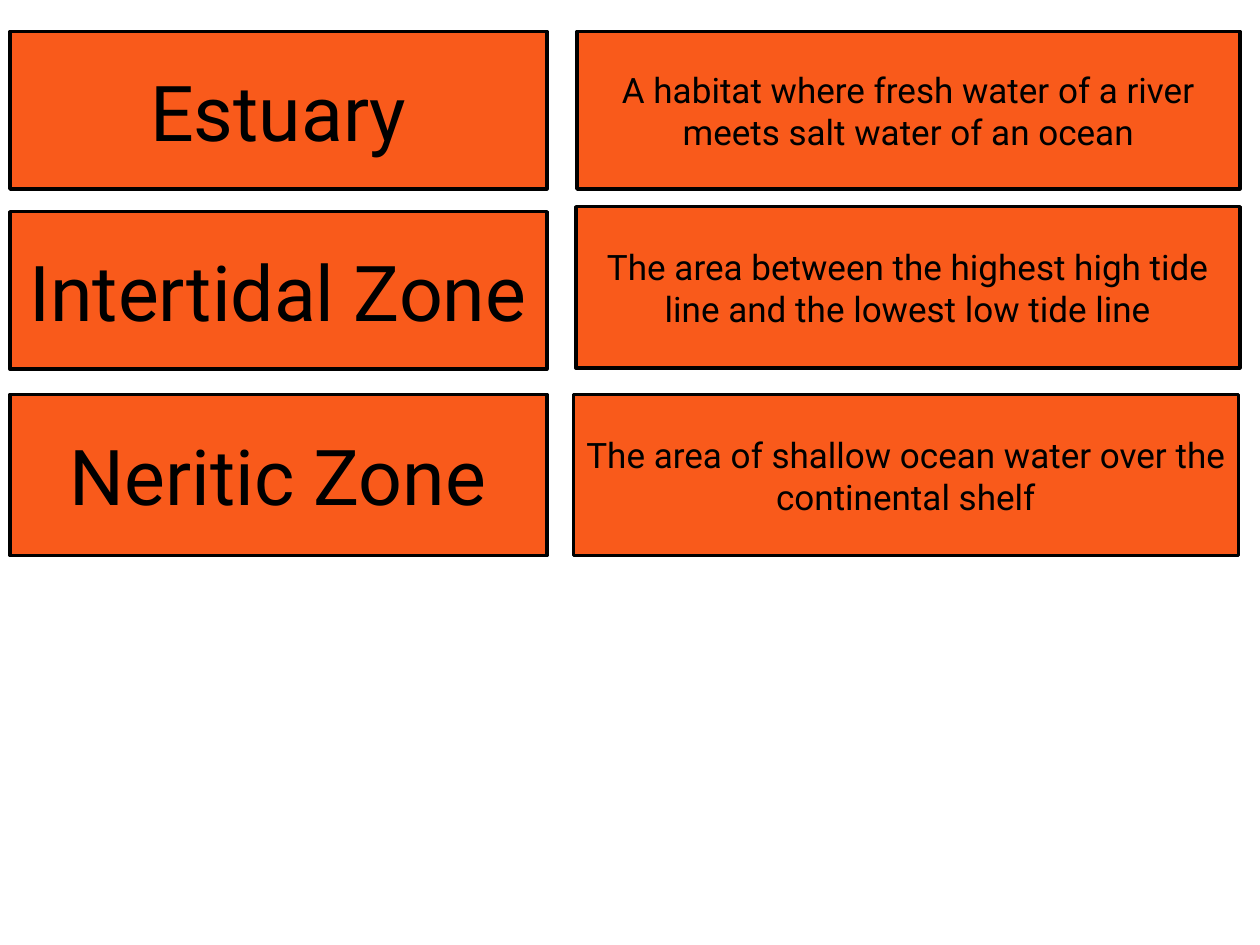
from pptx import Presentation
from pptx.dml.color import RGBColor
from pptx.enum.shapes import MSO_SHAPE
from pptx.enum.text import MSO_ANCHOR, PP_ALIGN
from pptx.util import Inches, Pt

PROCESS = MSO_SHAPE.FLOWCHART_PROCESS
MIDDLE = MSO_ANCHOR.MIDDLE
CENTER = PP_ALIGN.CENTER

ORANGE = RGBColor(0xF9, 0x5A, 0x1B)
BLACK = RGBColor(0, 0, 0)
FONT = "Roboto"

TERM_LEFT, TERM_WIDTH = 0.08, 4.26

# Term, its (top, height), definition, its (left, top, width, height)
CARDS = [
    ("Estuary", (0.25, 1.25),
     "A habitat where fresh water of a river meets salt water of an ocean",
     (4.58, 0.25, 5.26, 1.25)),
    ("Intertidal Zone", (1.68, 1.25),
     "The area between the highest high tide line and the lowest low tide line",
     (4.57, 1.64, 5.27, 1.28)),
    ("Neritic Zone", (3.13, 1.28),
     "The area of shallow ocean water over the continental shelf",
     (4.55, 3.13, 5.28, 1.28)),
]


def write_text(sp, text, size, font=FONT, color=BLACK, align=CENTER):
    tf = sp.text_frame
    tf.word_wrap = True
    tf.vertical_anchor = MIDDLE
    p = tf.paragraphs[0]
    p.alignment = align
    r = p.add_run()
    r.text = text
    r.font.name = font
    r.font.size = Pt(size)
    r.font.color.rgb = color


def add_card(s, box, text, size):
    sp = s.shapes.add_shape(PROCESS, *(Inches(v) for v in box))
    sp.shadow.inherit = False
    sp.fill.solid()
    sp.fill.fore_color.rgb = ORANGE
    sp.line.color.rgb = BLACK
    sp.line.width = Pt(2)
    write_text(sp, text, size=size)


def main():
    prs = Presentation()
    prs.slide_width, prs.slide_height = Inches(10), Inches(7.5)
    s = prs.slides.add_slide(prs.slide_layouts[6])

    # One row per term: the term on the left, its definition on the right
    for term, (top, height), definition, box in CARDS:
        add_card(s, (TERM_LEFT, top, TERM_WIDTH, height), term, size=44)
        add_card(s, box, definition, size=20)

    prs.save("out.pptx")


if __name__ == "__main__":
    main()
